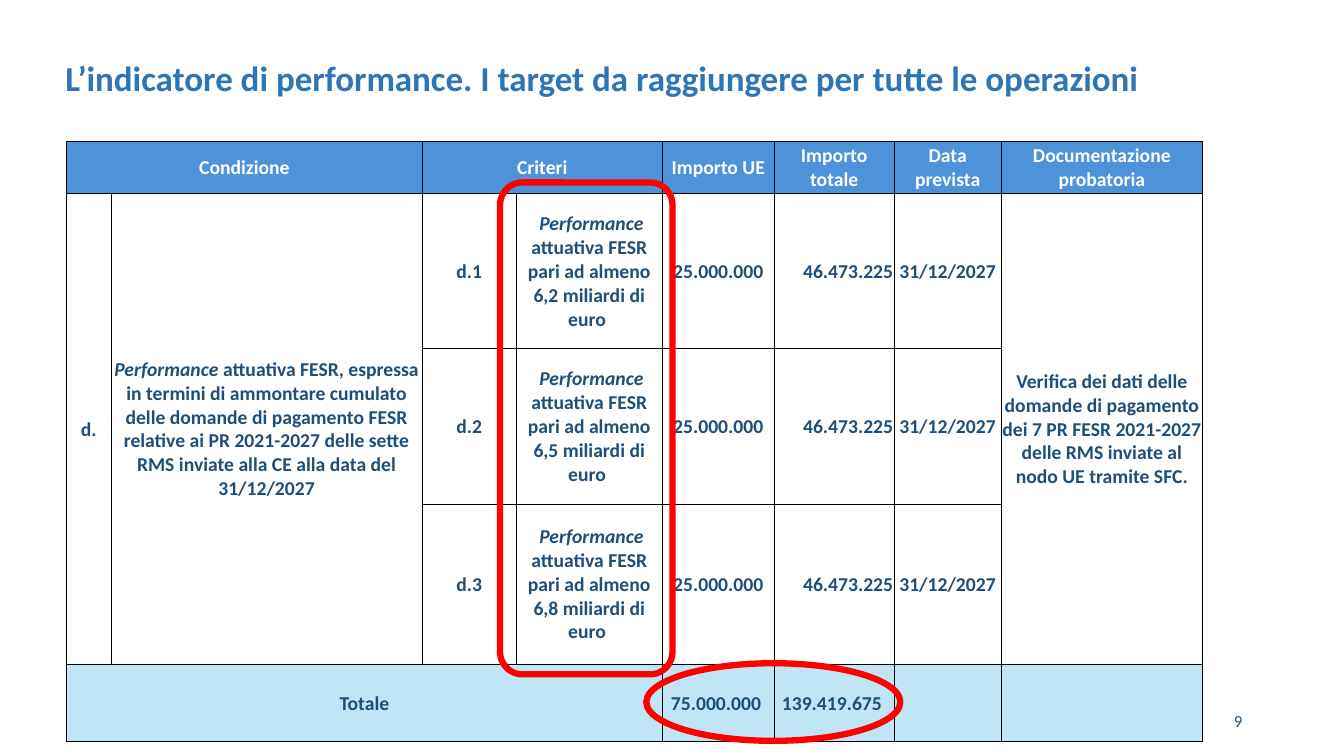
from dataclasses import dataclass
from typing import Any, Optional

from lxml.etree import SubElement
from pptx import Presentation
from pptx.dml.color import RGBColor
from pptx.enum.shapes import MSO_SHAPE
from pptx.enum.text import MSO_ANCHOR, PP_ALIGN
from pptx.oxml.ns import qn
from pptx.util import Emu, Pt

EMU_PER_PX = 9144
FONT_NAME = "Calibri"
WHITE = RGBColor(0xFF, 0xFF, 0xFF)
BLACK = RGBColor(0x00, 0x00, 0x00)
RED = RGBColor(0xFF, 0x00, 0x00)
TITLE_BLUE = RGBColor(0x2E, 0x75, 0xB6)
HEADER_BLUE = RGBColor(0x4D, 0x93, 0xD9)
TOTAL_BLUE = RGBColor(0xC0, 0xE6, 0xF5)
NAVY = RGBColor(0x1F, 0x4E, 0x79)

COLUMN_WIDTHS = [44, 309, 93, 145, 111, 119, 106, 200]
ROW_HEIGHTS = [52, 154, 154, 159, 77]
HEADER_ROW, TOTAL_ROW = 0, 4
AMOUNT_COLUMN = 5
ITALIC_WORD = "Performance"
CELL_FORMAT = {
    "vertical_anchor": MSO_ANCHOR.MIDDLE,
    "margin_left": Pt(0.7),
    "margin_right": Pt(0.7),
    "margin_top": Pt(0.7),
    "margin_bottom": 0,
}


@dataclass(frozen=True)
class Entry:
    row: int
    column: int
    text: str
    row_span: int = 1
    column_span: int = 1


@dataclass(frozen=True)
class Label:
    text: str
    box: tuple[int, int, int, int]
    size: int
    color: RGBColor
    bold: bool
    align: PP_ALIGN
    line_spacing: float


@dataclass(frozen=True)
class Highlight:
    outline: MSO_SHAPE
    box: tuple[int, int, int, int]
    corner: Optional[float] = None


ENTRIES = [
    Entry(0, 0, "Condizione", column_span=2),
    Entry(0, 2, "Criteri", column_span=2),
    Entry(0, 4, "Importo UE"),
    Entry(0, 5, "Importo totale"),
    Entry(0, 6, "Data prevista"),
    Entry(0, 7, "Documentazione probatoria"),
    Entry(1, 0, "d.", row_span=3),
    Entry(
        1, 1,
        "Performance attuativa FESR, espressa in termini di ammontare cumulato "
        "delle domande di pagamento FESR relative ai PR 2021-2027 delle sette "
        "RMS inviate alla CE alla data del 31/12/2027",
        row_span=3,
    ),
    Entry(
        1, 7,
        "Verifica dei dati delle domande di pagamento dei 7 PR FESR 2021-2027 "
        "delle RMS inviate al nodo UE tramite SFC.",
        row_span=3,
    ),
    Entry(4, 0, "Totale", column_span=4),
    Entry(4, 4, "75.000.000 "),
    Entry(4, 5, "139.419.675 "),
]
for target, billions in enumerate(["6,2", "6,5", "6,8"], start=1):
    criterion = f" Performance attuativa FESR pari ad almeno {billions} miliardi di euro "
    values = [f"d.{target}", criterion, "25.000.000", "46.473.225", "31/12/2027"]
    ENTRIES += [Entry(target, column, value) for column, value in enumerate(values, start=2)]

LABELS = [
    Label("L’indicatore di performance. I target da raggiungere per tutte le operazioni",
          (55, 47, 1150, 66), 25, TITLE_BLUE, True, PP_ALIGN.LEFT, 0.9),
    Label("9", (942, 695, 300, 40), 12, NAVY, False, PP_ALIGN.RIGHT, 1.0),
]
HIGHLIGHTS = [
    Highlight(MSO_SHAPE.ROUNDED_RECTANGLE, (496, 181, 171, 488), 0.13),
    Highlight(MSO_SHAPE.OVAL, (641, 658, 252, 77)),
]


def px(length: int) -> Emu:
    return Emu(length * EMU_PER_PX)


def apply(target: Any, values: dict[str, Any]) -> None:
    for name, value in values.items():
        setattr(target, name, value)


def add_run(paragraph: Any, text: str, size: int, color: RGBColor,
            bold: bool, italic: bool = False) -> None:
    run = paragraph.add_run()
    run.text = text
    apply(run.font, {"name": FONT_NAME, "size": Pt(size), "bold": bold, "italic": italic})
    run.font.color.rgb = color


def set_borders(cell: Any, row: int) -> None:
    properties = cell._tc.get_or_add_tcPr()
    heavy_side = {HEADER_ROW: "lnB", HEADER_ROW + 1: "lnT"}.get(row)
    for side in ("lnL", "lnR", "lnT", "lnB"):
        width = Pt(1) if side == heavy_side else Pt(0.5)
        border = SubElement(properties, qn(f"a:{side}"), w=str(int(width)))
        solid = SubElement(border, qn("a:solidFill"))
        SubElement(solid, qn("a:srgbClr"), val=str(BLACK))


def style_cell(cell: Any, row: int) -> None:
    apply(cell, CELL_FORMAT)
    set_borders(cell, row)
    fill_color = {HEADER_ROW: HEADER_BLUE, TOTAL_ROW: TOTAL_BLUE}.get(row)
    if fill_color is None:
        cell.fill.background()
    else:
        cell.fill.solid()
        cell.fill.fore_color.rgb = fill_color


def write_entry(table: Any, entry: Entry) -> None:
    cell = table.cell(entry.row, entry.column)
    if entry.row_span > 1 or entry.column_span > 1:
        cell.merge(table.cell(entry.row + entry.row_span - 1,
                              entry.column + entry.column_span - 1))
    paragraph = cell.text_frame.paragraphs[0]
    is_amount = entry.column == AMOUNT_COLUMN and HEADER_ROW < entry.row < TOTAL_ROW
    paragraph.alignment = PP_ALIGN.RIGHT if is_amount else PP_ALIGN.CENTER
    color = WHITE if entry.row == HEADER_ROW else NAVY
    before, word, after = entry.text.partition(ITALIC_WORD)
    for text in filter(None, (before, word, after)):
        add_run(paragraph, text, 14, color, True, text == ITALIC_WORD)


def add_targets_table(slide: Any) -> None:
    frame = slide.shapes.add_table(
        len(ROW_HEIGHTS), len(COLUMN_WIDTHS), px(66), px(140),
        px(sum(COLUMN_WIDTHS)), px(sum(ROW_HEIGHTS)))
    table = frame.table
    apply(table, {"first_row": False, "horz_banding": False})
    for column, width in zip(table.columns, COLUMN_WIDTHS):
        column.width = px(width)
    for index, height in enumerate(ROW_HEIGHTS):
        table.rows[index].height = px(height)
        for cell in table.rows[index].cells:
            style_cell(cell, index)
    for entry in ENTRIES:
        write_entry(table, entry)


def add_label(slide: Any, label: Label) -> None:
    frame = slide.shapes.add_textbox(*map(px, label.box)).text_frame
    apply(frame, {"word_wrap": True, "vertical_anchor": MSO_ANCHOR.MIDDLE})
    paragraph = frame.paragraphs[0]
    apply(paragraph, {"alignment": label.align, "line_spacing": label.line_spacing})
    add_run(paragraph, label.text, label.size, label.color, label.bold)


def add_highlight(slide: Any, highlight: Highlight) -> None:
    shape = slide.shapes.add_shape(highlight.outline, *map(px, highlight.box))
    shape.shadow.inherit = False
    shape.fill.background()
    shape.line.color.rgb = RED
    shape.line.width = Pt(4.5)
    if highlight.corner is not None:
        shape.adjustments[0] = highlight.corner


def main() -> None:
    deck = Presentation()
    apply(deck, {"slide_width": px(1333), "slide_height": px(750)})
    slide = deck.slides.add_slide(deck.slide_layouts[6])
    add_targets_table(slide)
    for label in LABELS:
        add_label(slide, label)
    for highlight in HIGHLIGHTS:
        add_highlight(slide, highlight)
    deck.save("out.pptx")


if __name__ == "__main__":
    main()
